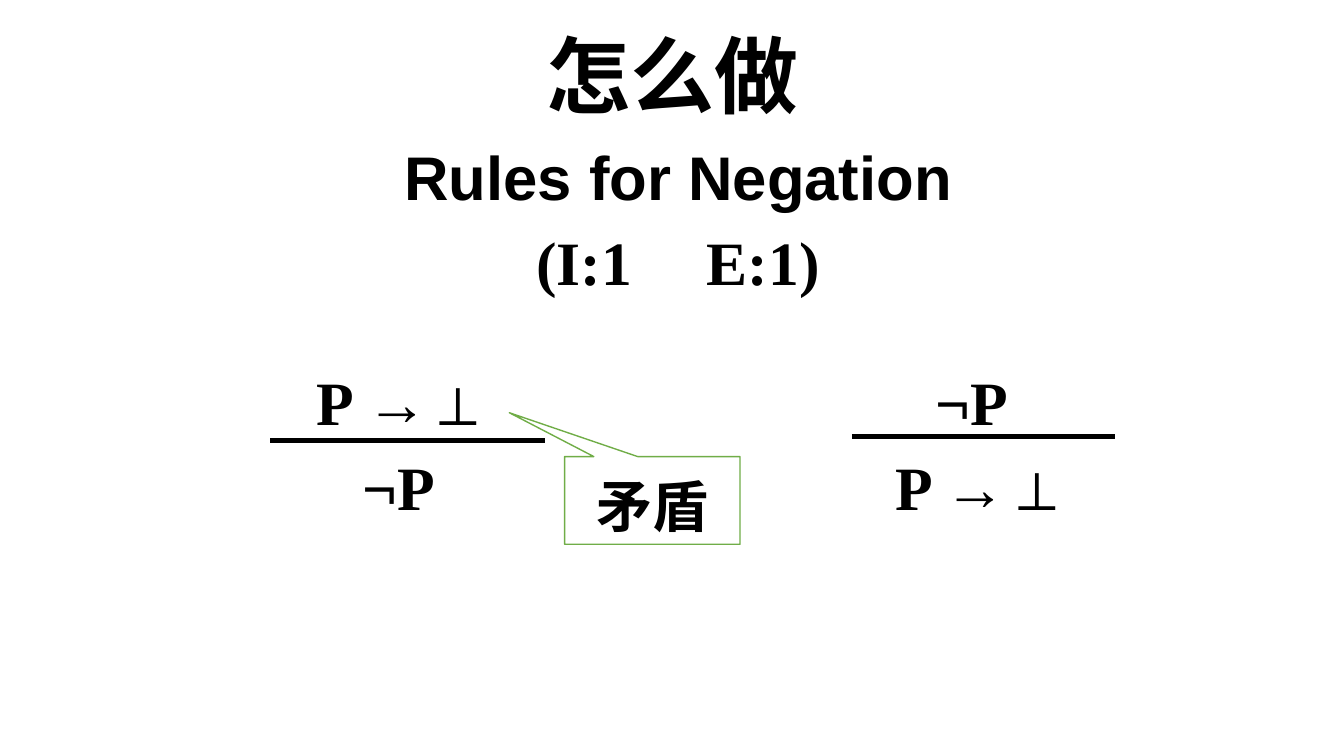
from dataclasses import dataclass

import lxml.etree
import pptx
import pptx.dml.color
import pptx.enum.shapes
import pptx.enum.text
import pptx.oxml.ns
import pptx.slide
import pptx.text.text
import pptx.util

Inches = pptx.util.Inches
Align = pptx.enum.text.PP_ALIGN
Anchor = pptx.enum.text.MSO_ANCHOR


@dataclass(frozen=True)
class Theme:
    ink: pptx.dml.color.RGBColor = pptx.dml.color.RGBColor(0, 0, 0)
    paper: pptx.dml.color.RGBColor = pptx.dml.color.RGBColor(255, 255, 255)
    green: pptx.dml.color.RGBColor = pptx.dml.color.RGBColor(0x70, 0xAD, 0x47)
    chinese: str = "Noto Sans CJK SC"
    sans: str = "Arial"
    serif: str = "Times New Roman"
    title_size: int = 60
    body_size: int = 44
    callout_size: int = 40
    rule_width: float = 3.25
    callout_width: float = 1


THEME = Theme()


@dataclass(frozen=True)
class Label:
    text: str
    left: float
    top: float
    width: float
    height: float
    font: str = THEME.serif
    size: int = THEME.body_size
    align: Align = Align.CENTER
    anchor: Anchor = Anchor.TOP
    line_spacing: float = 1.0
    margin_left: float = 0.1
    tab: float | None = None


@dataclass(frozen=True)
class InferenceLine:
    left: float
    right: float
    y: float


def formula(text: str, left: float, top: float) -> Label:
    """A premise or conclusion; negations are centred, implications start left."""
    negation = text.startswith("¬")
    return Label(text, left, top, 1.96 if negation else 2.12, 0.84,
                 align=Align.CENTER if negation else Align.LEFT)


PREMISE_TOP, CONCLUSION_TOP = 3.56, 4.4
IMPLICATION, NEGATION = "P →⊥", "¬P"

HEADINGS = [
    Label("怎么做", 0.92, 0.07, 11.5, 1.45, THEME.chinese, THEME.title_size,
          anchor=Anchor.MIDDLE, line_spacing=0.9),
    Label("Rules for Negation", 1.73, 1.26, 10, 0.91, THEME.sans,
          anchor=Anchor.BOTTOM, line_spacing=0.9),
    Label("(I:1\tE:1)", 4, 2.17, 5.45, 0.84, align=Align.LEFT,
          margin_left=1.32, tab=1.69),
]
CONTRADICTION = Label("矛盾", 5.44, 4.63, 2.07, 0.77, THEME.chinese, THEME.callout_size)
FORMULAS = [
    formula(IMPLICATION, 3.04, PREMISE_TOP),
    formula(NEGATION, 2.98, CONCLUSION_TOP),
    formula(NEGATION, 8.66, PREMISE_TOP),
    formula(IMPLICATION, 8.78, CONCLUSION_TOP),
]
INFERENCE_LINES = [InferenceLine(2.68, 5.41, 4.37), InferenceLine(8.45, 11.06, 4.33)]


def add_drawing_child(parent: lxml.etree._Element, tag: str, **attributes: str) -> lxml.etree._Element:
    return lxml.etree.SubElement(parent, pptx.oxml.ns.qn(f"a:{tag}"), attributes)


def style_paragraph(para: pptx.text.text._Paragraph, label: Label) -> None:
    para.alignment = label.align
    para.line_spacing = label.line_spacing
    if label.tab is not None:
        tabs = add_drawing_child(para._p.get_or_add_pPr(), "tabLst")
        add_drawing_child(tabs, "tab", pos=str(Inches(label.tab)), algn="l")
    font = para.font
    font.size = pptx.util.Pt(label.size)
    font.bold = True
    font.color.rgb = THEME.ink
    font.name = label.font
    if label.font == THEME.chinese:
        add_drawing_child(font._element, "ea", typeface=label.font)


def add_label(page: pptx.slide.Slide, label: Label) -> None:
    box = page.shapes.add_textbox(Inches(label.left), Inches(label.top),
                                  Inches(label.width), Inches(label.height))
    frame = box.text_frame
    frame.word_wrap = True
    frame.vertical_anchor = label.anchor
    frame.margin_left = Inches(label.margin_left)
    para = frame.paragraphs[0]
    para.text = label.text
    style_paragraph(para, label)


def add_inference_line(page: pptx.slide.Slide, rule: InferenceLine) -> None:
    line = page.shapes.add_connector(
        pptx.enum.shapes.MSO_CONNECTOR.STRAIGHT,
        Inches(rule.left), Inches(rule.y), Inches(rule.right), Inches(rule.y))
    line.line.color.rgb = THEME.ink
    line.line.width = pptx.util.Pt(THEME.rule_width)
    add_drawing_child(line._element.spPr, "effectLst")


def add_callout(page: pptx.slide.Slide) -> None:
    callout = page.shapes.add_shape(
        pptx.enum.shapes.MSO_SHAPE.RECTANGULAR_CALLOUT,
        Inches(5.6), Inches(4.53), Inches(1.74), Inches(0.87))
    callout.adjustments[0] = -0.815
    callout.adjustments[1] = -1.0
    callout.shadow.inherit = False
    callout.fill.solid()
    callout.fill.fore_color.rgb = THEME.paper
    callout.line.color.rgb = THEME.green
    callout.line.width = pptx.util.Pt(THEME.callout_width)


def main() -> None:
    deck = pptx.Presentation()
    deck.slide_width, deck.slide_height = Inches(13.33), Inches(7.5)
    page = deck.slides.add_slide(deck.slide_layouts[6])
    for heading in HEADINGS:
        add_label(page, heading)
    add_callout(page)
    for label in [CONTRADICTION, *FORMULAS]:
        add_label(page, label)
    for rule in INFERENCE_LINES:
        add_inference_line(page, rule)
    deck.save("out.pptx")


if __name__ == "__main__":
    main()
